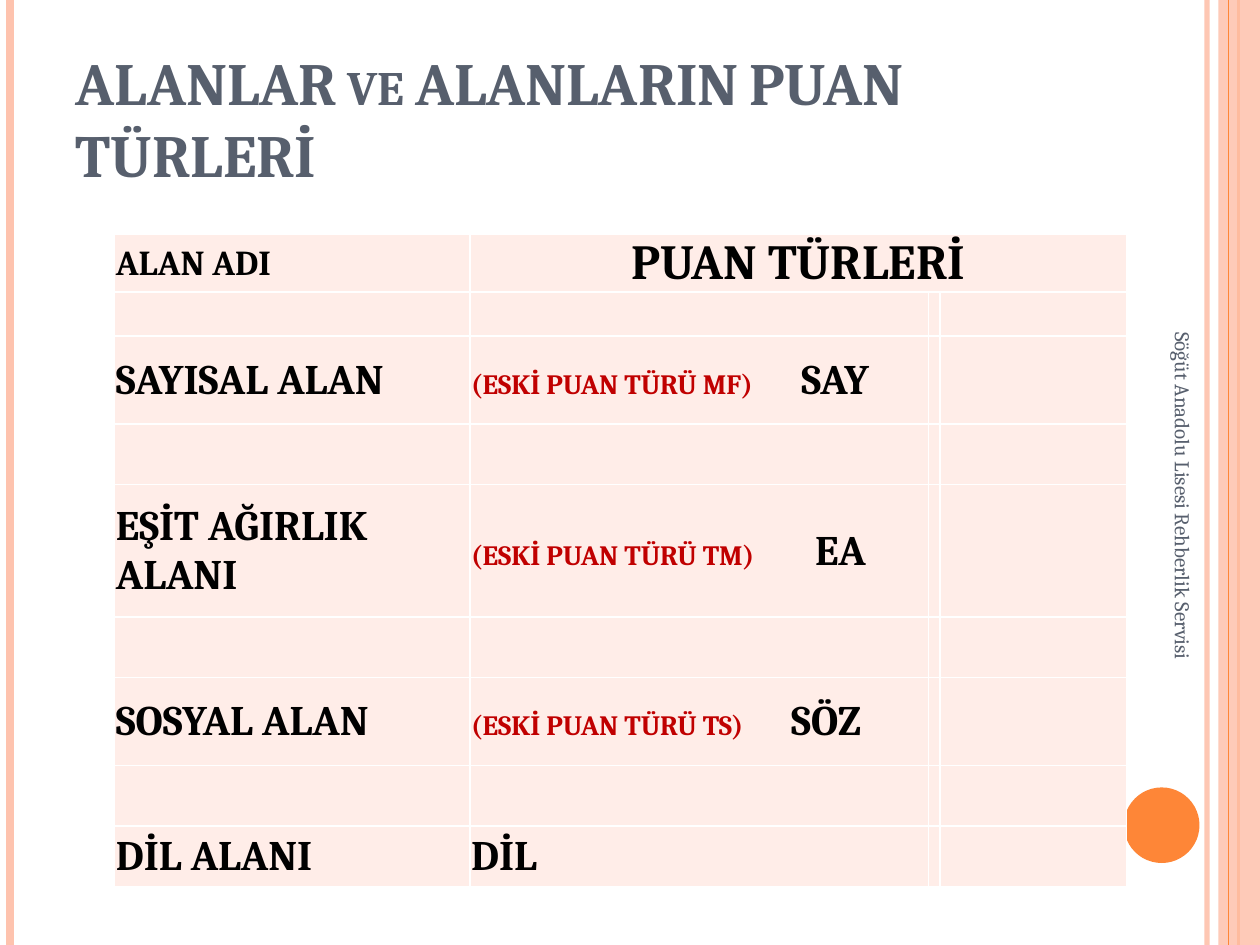
from dataclasses import dataclass

from lxml import etree
from pptx import Presentation
from pptx import util as u
from pptx.dml.color import RGBColor
from pptx.enum import shapes, text
from pptx.oxml.ns import qn


@dataclass(frozen=True)
class Theme:
    font: str = "Cambria"
    ink: str = "000000"
    slate: str = "575F6D"
    red: str = "C00000"
    orange: str = "FE8637"
    peach: str = "FEC3AE"
    blush: str = "FFEDE8"
    white: str = "FFFFFF"
    title: float = 34.2
    heading: int = 28
    entry: int = 24
    label: int = 20
    remark: int = 16
    side: int = 12


@dataclass(frozen=True)
class Box:
    left: float
    top: float
    width: float
    height: float

    def share(self, left, top, width, height):
        return Box(self.left + left * self.width, self.top + top * self.height,
                   width * self.width, height * self.height)

    def emu(self):
        return [u.Inches(value) for value in (self.left, self.top, self.width, self.height)]


THEME = Theme()
PAGE = Box(0, 0, 10, 7.5)
COLUMN_WIDTHS = [2.82, 3.64, 0.09, 1.48]
ROW_HEIGHTS = [0.45, 0.35, 0.7, 0.48, 1.05, 0.48, 0.7, 0.48, 0.48]
ENTRIES = [
    (2, "SAYISAL ALAN", "(ESKİ PUAN TÜRÜ MF)", "SAY", 2.62),
    (4, "EŞİT AĞIRLIK ALANI", "(ESKİ PUAN TÜRÜ TM)", "EA", 2.73),
    (6, "SOSYAL ALAN", "(ESKİ PUAN TÜRÜ TS)", "SÖZ", 2.54),
    (8, "DİL ALANI", "", "DİL", 0),
]


def color(value):
    return RGBColor.from_string(value)


def style(font, size, ink, bold=False):
    font.name = THEME.font
    font.size = u.Pt(size)
    font.bold = bold
    font.color.rgb = color(ink)


def set_opacity(shape, percent):
    for fill in shape._element.spPr.iter(qn("a:srgbClr")):
        etree.SubElement(fill, qn("a:alpha")).set("val", str(percent * 1000))


def add_rule(slide, box, position, ink, width, opacity=100):
    x = u.Inches(box.left + position * box.width)
    rule = slide.shapes.add_connector(shapes.MSO_CONNECTOR.STRAIGHT, x, u.Inches(box.top),
                                      x, u.Inches(box.top + box.height))
    rule.line.color.rgb = color(ink)
    rule.line.width = u.Pt(width)
    if opacity < 100:
        set_opacity(rule, opacity)
    etree.SubElement(rule._element.spPr, qn("a:effectLst"))


def add_filled(slide, box, kind, ink):
    shape = slide.shapes.add_shape(kind, *box.emu())
    shape.shadow.inherit = False
    shape.fill.solid()
    shape.fill.fore_color.rgb = color(ink)
    shape.line.fill.background()
    return shape


def add_decoration(slide, box):
    add_rule(slide, box, 0.958, THEME.peach, 3, 93)
    add_rule(slide, box, 0.008, THEME.peach, 4.5)
    add_rule(slide, box, 0.983, THEME.orange, 1.5)
    band = add_filled(slide, box.share(0.967, 0, 0.033, 1),
                      shapes.MSO_SHAPE.RECTANGLE, THEME.peach)
    set_opacity(band, 87)
    add_rule(slide, box, 0.975, THEME.orange, 0.75)
    add_filled(slide, box.share(0.892, 0.8333, 0.06, 0.08), shapes.MSO_SHAPE.OVAL, THEME.orange)


def add_title(slide, box):
    title = slide.shapes.title
    title.left, title.top, title.width, title.height = box.emu()
    frame = title.text_frame
    frame.auto_size = text.MSO_AUTO_SIZE.NONE
    frame.vertical_anchor = text.MSO_ANCHOR.BOTTOM
    paragraph = frame.paragraphs[0]
    paragraph.alignment = text.PP_ALIGN.LEFT
    style(paragraph.font, THEME.title, THEME.slate, True)
    run = paragraph.add_run()
    run.text = "ALANLAR ve ALANLARIN PUAN TÜRLERİ"
    run._r.get_or_add_rPr().set("cap", "small")


def format_cell(cell):
    cell.margin_left = cell.margin_right = cell.margin_top = u.Inches(0.01)
    cell.margin_bottom = 0
    cell.vertical_anchor = text.MSO_ANCHOR.MIDDLE
    cell.fill.solid()
    cell.fill.fore_color.rgb = color(THEME.blush)
    properties = cell._tc.get_or_add_tcPr()
    for index, side in enumerate(("a:lnL", "a:lnR", "a:lnT", "a:lnB")):
        border = etree.Element(qn(side), w=str(u.Pt(1)))
        fill = etree.SubElement(border, qn("a:solidFill"))
        etree.SubElement(fill, qn("a:srgbClr")).set("val", THEME.white)
        properties.insert(index, border)


def write_cell(cell, words, size):
    paragraph = cell.text_frame.paragraphs[0]
    style(paragraph.font, size, THEME.ink, True)
    paragraph.add_run().text = words
    return paragraph


def write_score(cell, remark, score, stop):
    if not remark:
        write_cell(cell, score, THEME.entry)
        return
    paragraph = cell.text_frame.paragraphs[0]
    for words, size, ink in ((remark + "\t", THEME.remark, THEME.red),
                             (score, THEME.entry, THEME.ink)):
        run = paragraph.add_run()
        run.text = words
        style(run.font, size, ink, True)
    stops = etree.SubElement(paragraph._p.get_or_add_pPr(), qn("a:tabLst"))
    etree.SubElement(stops, qn("a:tab"), pos=str(u.Inches(stop)), algn="l")


def add_score_table(slide, box):
    table = slide.shapes.add_table(len(ROW_HEIGHTS), len(COLUMN_WIDTHS), *box.emu()).table
    table.first_row = table.horz_banding = False
    for column, width in zip(table.columns, COLUMN_WIDTHS):
        column.width = u.Inches(box.width * width / sum(COLUMN_WIDTHS))
    for row, height in zip(table.rows, ROW_HEIGHTS):
        row.height = u.Inches(box.height * height / sum(ROW_HEIGHTS))
    for cell in table.iter_cells():
        format_cell(cell)
    table.cell(0, 1).merge(table.cell(0, 3))
    write_cell(table.cell(0, 0), "ALAN ADI", THEME.label)
    heading = write_cell(table.cell(0, 1), "PUAN TÜRLERİ", THEME.heading)
    heading.alignment = text.PP_ALIGN.CENTER
    for row, area, remark, score, stop in ENTRIES:
        write_cell(table.cell(row, 0), area, THEME.entry)
        write_score(table.cell(row, 1), remark, score, stop)


def add_side_note(slide, box):
    note = slide.shapes.add_textbox(*box.emu())
    note.rotation = 90
    frame = note.text_frame
    frame.word_wrap = True
    frame.vertical_anchor = text.MSO_ANCHOR.MIDDLE
    paragraph = frame.paragraphs[0]
    style(paragraph.font, THEME.side, THEME.slate)
    paragraph.add_run().text = "Söğüt Anadolu Lisesi Rehberlik Servisi"


def main():
    presentation = Presentation()
    presentation.slide_width = u.Inches(PAGE.width)
    presentation.slide_height = u.Inches(PAGE.height)
    slide = presentation.slides.add_slide(presentation.slide_layouts[5])
    add_decoration(slide, PAGE)
    add_title(slide, PAGE.share(0.05, 0.04, 0.817, 0.167))
    add_score_table(slide, PAGE.share(0.091, 0.248, 0.803, 0.6893))
    add_side_note(slide, PAGE.share(0.764, 0.5453, 0.35, 0.0533))
    presentation.save("out.pptx")


if __name__ == "__main__":
    main()
